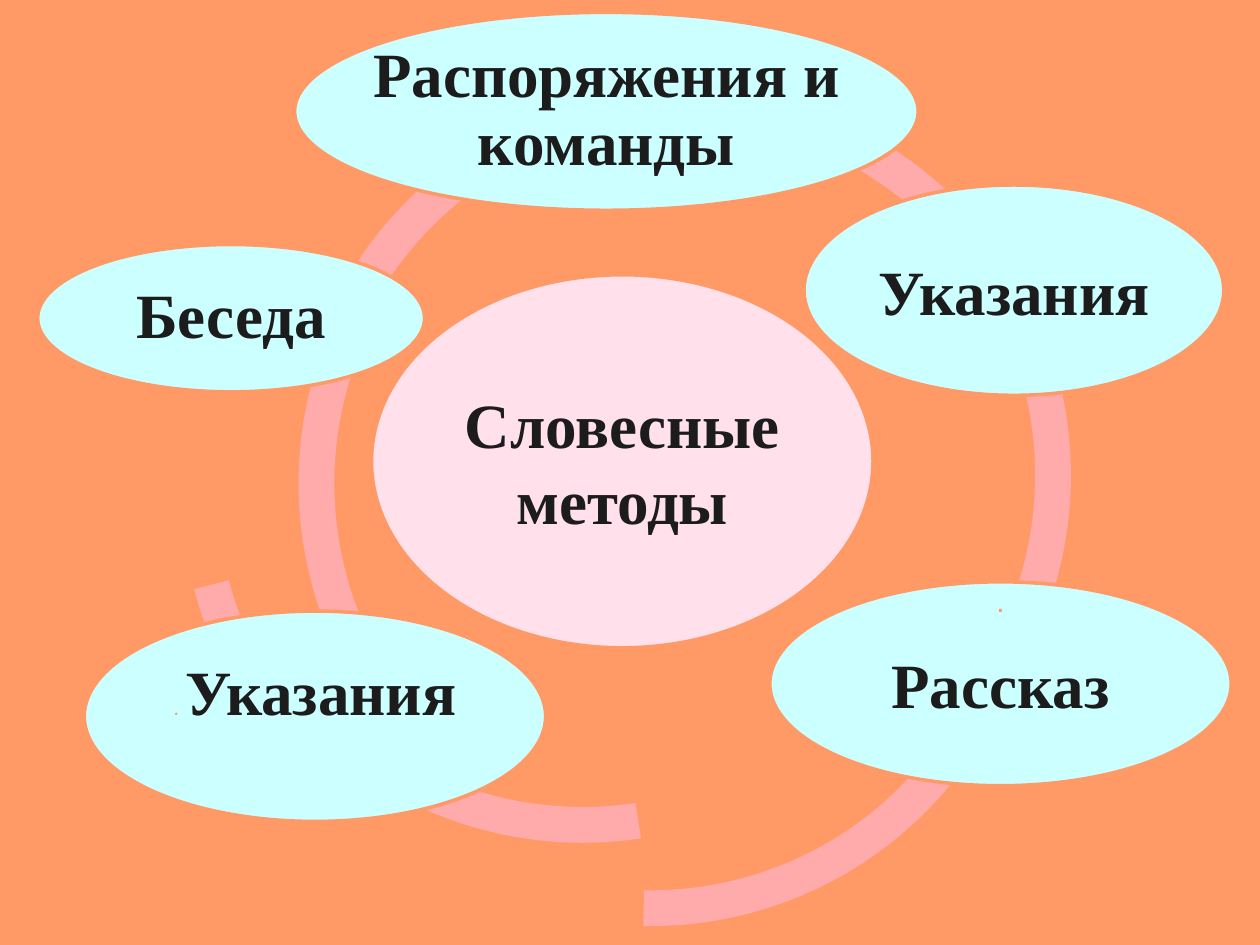
from pptx import Presentation
from pptx.dml.color import RGBColor
from pptx.enum import shapes, text
from pptx.util import Cm, Pt

ORANGE = RGBColor(0xFF, 0x99, 0x66)
ROSE = RGBColor(0xFF, 0xAB, 0xAB)
PINK = RGBColor(0xFF, 0xE0, 0xEB)
CYAN = RGBColor(0xCC, 0xFF, 0xFF)
DARK = RGBColor(0x1C, 0x1C, 0x1C)

ARC_SIZE = 15.67
ARC_THICKNESS = 0.046
ARCS = [
    (3.66, 2.06, 124.2, 165.32),
    (3.91, 1.32, 81.36, 120.34),
    (5.28, 3.0, 13.63, 91.06),
    (5.92, 1.75, 198.36, 19.91),
    (6.02, 1.91, 154.66, 197.61),
]


def add_arc(s, left, top, start, end):
    sp = s.shapes.add_shape(shapes.MSO_SHAPE.BLOCK_ARC, Cm(left), Cm(top),
                            Cm(ARC_SIZE), Cm(ARC_SIZE))
    sp.shadow.inherit = False
    sp.adjustments[0] = start * 0.6
    sp.adjustments[1] = end * 0.6
    sp.adjustments[2] = ARC_THICKNESS
    sp.fill.solid()
    sp.fill.fore_color.rgb = ROSE
    sp.line.fill.background()


def add_run(p, words, size=36, font="Times New Roman", color=DARK, bold=True):
    r = p.add_run()
    r.text = words
    r.font.size = Pt(size)
    r.font.name = font
    r.font.bold = bold
    r.font.color.rgb = color


def add_dot(p, words, size):
    add_run(p, words, size=size, font="Arial", color=ORANGE, bold=False)


def add_oval(s, box, fill=CYAN, top_inset=0.1, anchor=text.MSO_ANCHOR.MIDDLE):
    box = [Cm(v) for v in box]
    sp = s.shapes.add_shape(shapes.MSO_SHAPE.OVAL, *box)
    sp.shadow.inherit = False
    sp.fill.solid()
    sp.fill.fore_color.rgb = fill
    sp.line.color.rgb = ORANGE
    sp.line.width = Pt(2)
    tf = s.shapes.add_textbox(*box).text_frame
    tf.word_wrap = True
    tf.vertical_anchor = anchor
    tf.margin_left = tf.margin_right = tf.margin_bottom = Cm(0.1)
    tf.margin_top = Cm(top_inset)
    return tf


def add_line(tf, first=True, spacing=0.9):
    p = tf.paragraphs[0] if first else tf.add_paragraph()
    p.alignment = text.PP_ALIGN.CENTER
    p.line_spacing = spacing
    return p


def main():
    prs = Presentation()
    prs.slide_width, prs.slide_height = Cm(25.4), Cm(19.05)
    s = prs.slides.add_slide(prs.slide_layouts[6])
    s.background.fill.solid()
    s.background.fill.fore_color.rgb = ORANGE

    for arc in ARCS:
        add_arc(s, *arc)

    tf = add_oval(s, (7.49, 5.54, 10.11, 7.52), fill=PINK)
    add_run(add_line(tf, spacing=1.0), "Словесные")
    add_run(add_line(tf, first=False, spacing=1.0), "методы")

    tf = add_oval(s, (5.94, 0.25, 12.57, 3.99))
    add_run(add_line(tf), "Распоряжения и команды")

    tf = add_oval(s, (16.21, 3.73, 8.46, 4.24), top_inset=0.3)
    add_run(add_line(tf), "Указания")

    tf = add_oval(s, (15.52, 11.73, 9.3, 4.11), anchor=text.MSO_ANCHOR.TOP)
    p = add_line(tf)
    p.space_after = Pt(20)
    add_dot(p, ".", 17)
    add_run(add_line(tf, first=False), "Рассказ")

    tf = add_oval(s, (1.7, 12.32, 9.3, 4.24), top_inset=0.84,
                  anchor=text.MSO_ANCHOR.TOP)
    p = add_line(tf, spacing=1.0)
    add_dot(p, ". ", 12)
    add_run(p, "Указания")

    tf = add_oval(s, (0.76, 4.93, 7.8, 2.97))
    add_run(add_line(tf), "Беседа")

    prs.save("out.pptx")


if __name__ == "__main__":
    main()
